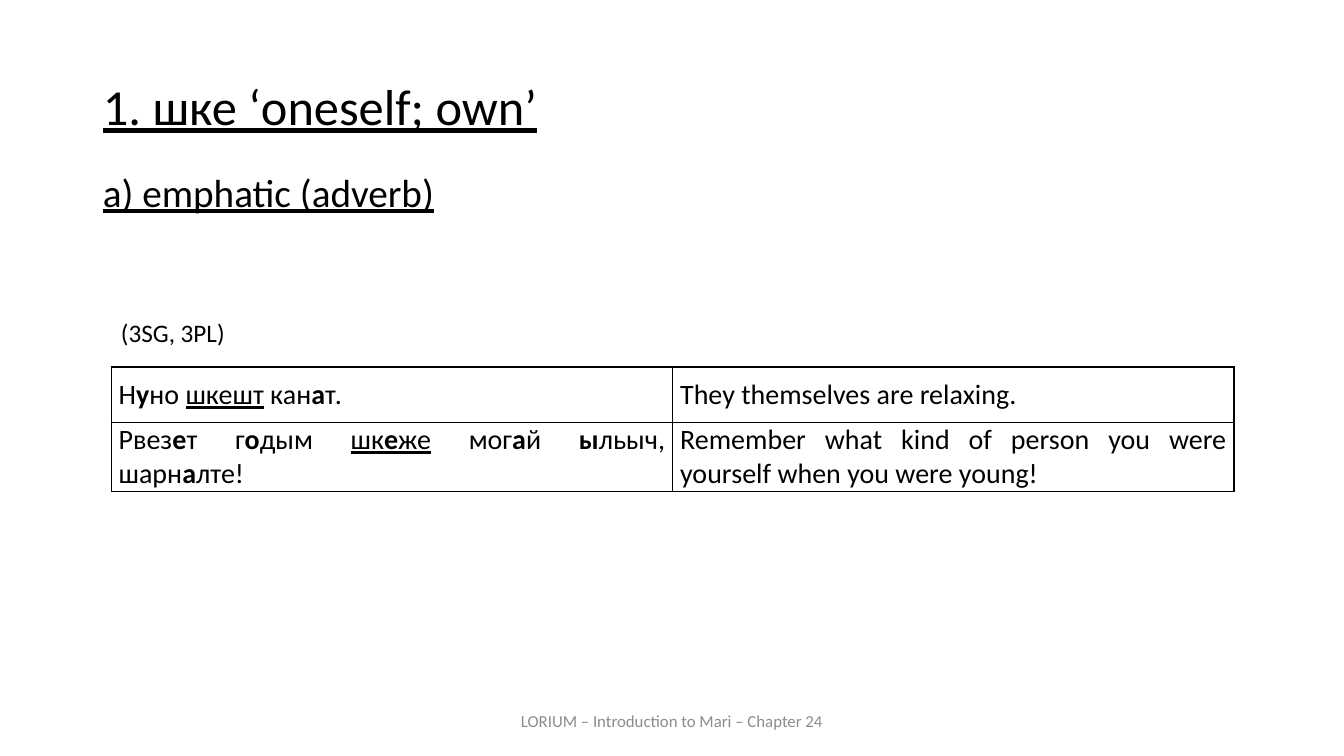
from dataclasses import dataclass

from lxml import etree
from pptx import Presentation
from pptx import util as u
from pptx.dml.color import RGBColor
from pptx.enum import text
from pptx.oxml.ns import qn

Cm, Pt = u.Cm, u.Pt

# Inline marks: *bold* and _underlined_
HEADING = "_1. шке ‘oneself; own’_"
SUBHEADING = "_a) emphatic (adverb)_"
PERSONS = "(3SG, 3PL)"
FOOTER = "LORIUM – Introduction to Mari – Chapter 24"
EXAMPLES = [
    ("Н*у*но _шкешт_ кан*а*т.", "They themselves are relaxing."),
    ("Рвез*е*т г*о*дым _шк*е*же_ мог*а*й *ы*льыч, шарн*а*лте!",
     "Remember what kind of person you were yourself when you were young!"),
]
ROW_ALIGN = [text.PP_ALIGN.LEFT, text.PP_ALIGN.JUSTIFY]


@dataclass(frozen=True)
class Theme:
    font: str = "Calibri"
    ink: RGBColor = RGBColor(0, 0, 0)
    muted: RGBColor = RGBColor(0x8C, 0x8C, 0x8C)
    heading: int = 36
    subheading: int = 28
    example: int = 20
    label: int = 18
    footer: int = 12


THEME = Theme()
SLIDE_W, SLIDE_H = Cm(33.87), Cm(19.05)
MARGIN = Cm(2.34)
CONTENT_W = SLIDE_W - 2 * MARGIN
TABLE_LEFT, TABLE_TOP, TABLE_W = Cm(2.8), Cm(9.25), Cm(28.3)
ROW_HEIGHTS = [Cm(1.4), Cm(1.73)]
FOOTER_W = Cm(11.43)


def write(tf, marked, size, color=THEME.ink, align=text.PP_ALIGN.LEFT):
    """Fill the first paragraph, turning inline marks into bold and underline."""
    p = tf.paragraphs[0]
    p.alignment = align
    p.font.name, p.font.size, p.font.color.rgb = THEME.font, Pt(size), color
    bold = underline = False
    for i, by_bold in enumerate(marked.split("*")):
        bold = i % 2 == 1
        for j, piece in enumerate(by_bold.split("_")):
            if j:
                underline = not underline
            if piece:
                r = p.add_run()
                r.text = piece
                r.font.name, r.font.size = THEME.font, Pt(size)
                r.font.color.rgb = color
                r.font.bold, r.font.underline = bold, underline
    return p


def place(sp, left, top, width, height, anchor=text.MSO_ANCHOR.TOP):
    sp.left, sp.top, sp.width, sp.height = left, top, width, height
    tf = sp.text_frame
    tf.word_wrap = True
    tf.auto_size = text.MSO_AUTO_SIZE.NONE
    tf.vertical_anchor = anchor
    return tf


def add_text(s, *box, **options):
    return place(s.shapes.add_textbox(*box), *box, **options)


def border(cell):
    tc_pr = cell._tc.get_or_add_tcPr()
    for i, side in enumerate(("a:lnL", "a:lnR", "a:lnT", "a:lnB")):
        ln = etree.Element(qn(side), w=str(Pt(1)))
        fill = etree.SubElement(ln, qn("a:solidFill"))
        etree.SubElement(fill, qn("a:srgbClr"), val=str(THEME.ink))
        tc_pr.insert(i, ln)


def add_examples(s):
    tbl = s.shapes.add_table(len(EXAMPLES), 2, TABLE_LEFT, TABLE_TOP,
                             TABLE_W, sum(ROW_HEIGHTS)).table
    tbl.first_row = tbl.horz_banding = False
    for col in tbl.columns:
        col.width = TABLE_W // 2
    for row, height, align, words in zip(tbl.rows, ROW_HEIGHTS, ROW_ALIGN, EXAMPLES):
        row.height = height
        for cell, marked in zip(row.cells, words):
            cell.margin_left = cell.margin_right = Cm(0.19)
            cell.margin_top = cell.margin_bottom = 0
            cell.vertical_anchor = text.MSO_ANCHOR.MIDDLE
            cell.fill.background()
            border(cell)
            write(cell.text_frame, marked, THEME.example, align=align)


def main():
    prs = Presentation()
    prs.slide_width, prs.slide_height = SLIDE_W, SLIDE_H
    s = prs.slides.add_slide(prs.slide_layouts[1])
    title, body = s.placeholders

    tf = place(title, MARGIN, Cm(1.93), CONTENT_W, Cm(2.11))
    write(tf, HEADING, THEME.heading).line_spacing = 0.9

    tf = place(body, MARGIN, Cm(4.24), CONTENT_W, Cm(1.47))
    p = write(tf, SUBHEADING, THEME.subheading)
    p.line_spacing, p.space_before = 0.9, Pt(0)
    p_pr = p._p.get_or_add_pPr()
    p_pr.set("marL", "0")
    p_pr.set("indent", "0")
    p_pr.insert_element_before(etree.Element(qn("a:buNone")),
                               "a:tabLst", "a:defRPr", "a:extLst")

    write(add_text(s, TABLE_LEFT, Cm(7.87), Cm(16.94), Cm(1.02)),
          PERSONS, THEME.label)
    add_examples(s)
    write(add_text(s, (SLIDE_W - FOOTER_W) // 2, Cm(17.65), FOOTER_W, Cm(1.02),
                   anchor=text.MSO_ANCHOR.MIDDLE),
          FOOTER, THEME.footer, THEME.muted, text.PP_ALIGN.CENTER)
    prs.save("out.pptx")


if __name__ == "__main__":
    main()
